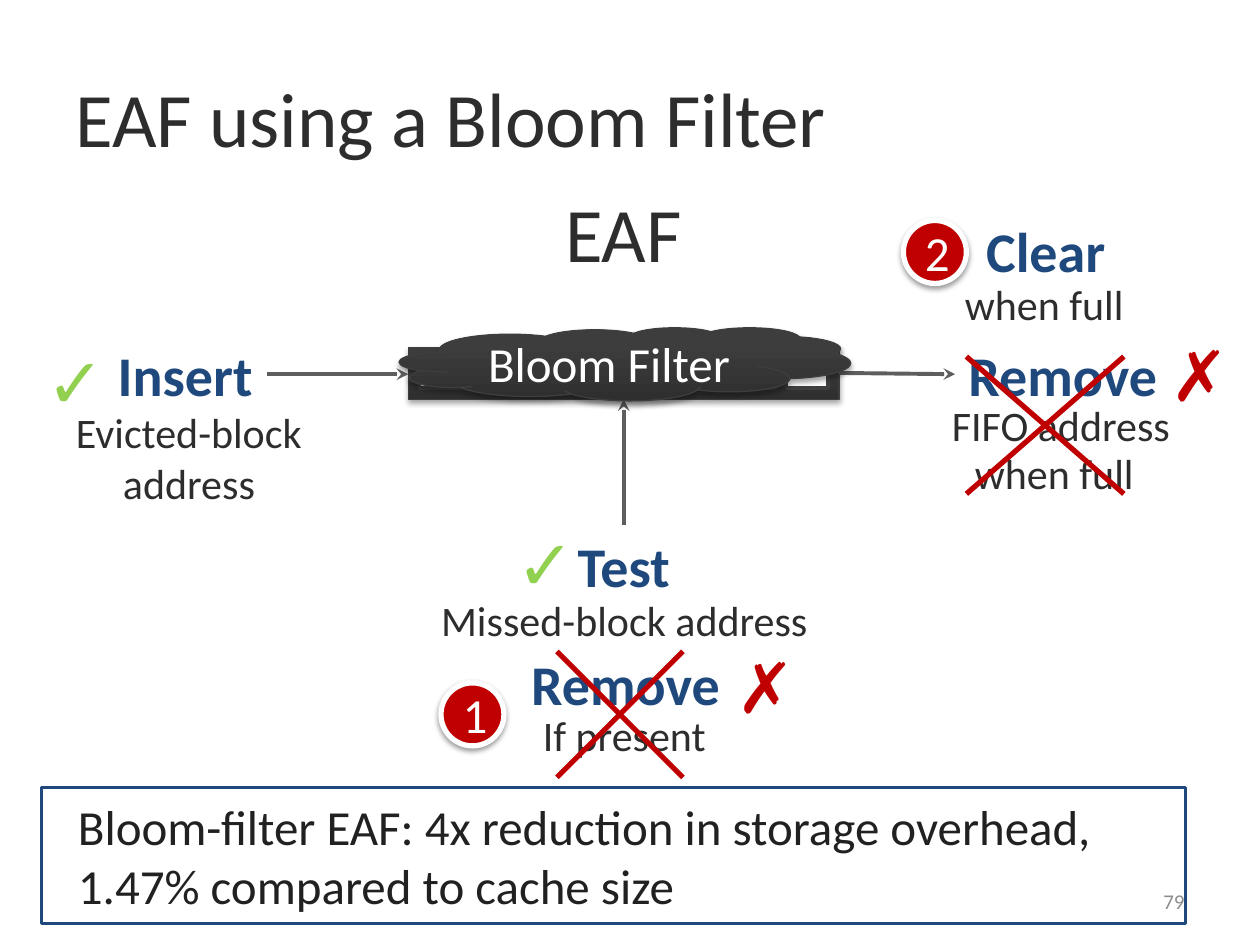
import pptx
import pptx.dml.color
import pptx.enum.shapes
import pptx.enum.text
import pptx.oxml
import pptx.oxml.ns
import pptx.util
from pptx.util import Inches

COLORS = {
    "text": "2D2D2D", "body": "212121", "heading": "1F497D", "white": "FFFFFF",
    "red": "C00000", "green": "92D050", "arrow": "5E5E5E", "number": "8C8C8C",
    "dark": "2F2F2F", "charcoal": "3D3D3D", "edge": "3E3E3E", "cell": "3F3F3F",
}
SHAPES = pptx.enum.shapes.MSO_SHAPE
ALIGN = pptx.enum.text.PP_ALIGN
ANCHOR = pptx.enum.text.MSO_ANCHOR


def rgb(name):
    return pptx.dml.color.RGBColor.from_string(COLORS[name])


def write(shape, text, size, color, bold=False, align=ALIGN.CENTER):
    paragraph = shape.text_frame.paragraphs[0]
    paragraph.alignment = align
    run = paragraph.add_run()
    run.text = text
    run.font.name = "Calibri"
    run.font.size = pptx.util.Pt(size)
    run.font.bold = bold
    run.font.color.rgb = rgb(color)
    return paragraph


def add_text(slide, box, text, size=24, color="text", bold=False,
             align=ALIGN.CENTER, wrap=True, anchor=ANCHOR.TOP, margin=0.05):
    shape = slide.shapes.add_textbox(*map(Inches, box))
    frame = shape.text_frame
    frame.word_wrap = wrap
    frame.vertical_anchor = anchor
    frame.margin_top = frame.margin_bottom = Inches(margin)
    write(shape, text, size, color, bold, align)


def add_heading(slide, box, text, margin=0.05):
    add_text(slide, box, text, 32, "heading", True, wrap=False, margin=margin)


def add_mark(slide, left, top, text, color):
    width = 0.64 if text == "✓" else 0.56
    add_text(slide, (left, top, width, 0.77), text, 40, color,
             align=ALIGN.LEFT, wrap=False)


def add_shape(slide, kind, box, fill, line, line_width):
    shape = slide.shapes.add_shape(kind, *map(Inches, box))
    shape.shadow.inherit = False
    shape.fill.solid()
    shape.fill.fore_color.rgb = rgb(fill)
    shape.line.color.rgb = rgb(line)
    shape.line.width = pptx.util.Pt(line_width)
    shape.text_frame.word_wrap = True
    shape.text_frame.vertical_anchor = ANCHOR.MIDDLE
    return shape


def add_shadow(shape, distance, opacity):
    effects = shape._element.spPr.find(pptx.oxml.ns.qn("a:effectLst"))
    effects.append(pptx.oxml.parse_xml(
        f'<a:outerShdw {pptx.oxml.ns.nsdecls("a")} blurRad="{pptx.util.Pt(3.1)}" '
        f'dist="{pptx.util.Pt(distance)}" dir="5400000" rotWithShape="0">'
        f'<a:srgbClr val="000000"><a:alpha val="{opacity * 1000}"/></a:srgbClr>'
        '</a:outerShdw>'))


def add_dark_shape(slide, kind, box):
    shape = add_shape(slide, kind, box, "dark", "edge", 0.75)
    shape.fill.gradient()
    shape.fill.gradient_angle = 90
    stops = shape.fill.gradient_stops
    for stop, color, position in zip(stops, ("dark", "charcoal"), (0, 0.8)):
        stop.color.rgb = rgb(color)
        stop.position = position
    add_shadow(shape, 1.8, 35)
    return shape


def add_badge(slide, left, top, text):
    badge = add_shape(slide, SHAPES.OVAL, (left, top, 0.5, 0.5), "red", "white", 3)
    add_shadow(badge, 1.6, 38)
    write(badge, text, 28, "white")


def add_line(slide, start, end, color, width, arrow=False):
    line = slide.shapes.add_connector(
        pptx.enum.shapes.MSO_CONNECTOR.STRAIGHT, *map(Inches, start + end))
    line.line.color.rgb = rgb(color)
    line.line.width = pptx.util.Pt(width)
    namespace = pptx.oxml.ns.nsdecls("a")
    if arrow:
        line.line._get_or_add_ln().append(
            pptx.oxml.parse_xml(f'<a:tailEnd {namespace} type="stealth"/>'))
    line._element.spPr.append(pptx.oxml.parse_xml(f"<a:effectLst {namespace}/>"))


def add_cross(slide, left, top, right, bottom):
    add_line(slide, (left, top), (right, bottom), "red", 3)
    add_line(slide, (right, top), (left, bottom), "red", 3)


def add_filter(slide):
    add_dark_shape(slide, SHAPES.RECTANGLE, (3.24, 2.76, 3.42, 0.41))
    for index in range(8):
        add_shape(slide, SHAPES.RECTANGLE,
                  (3.33 + index * 0.416, 2.82, 0.33, 0.26), "white", "cell", 2)
    add_line(slide, (2.12, 2.97), (3.24, 2.97), "arrow", 2.25, True)
    add_line(slide, (6.66, 2.96), (7.58, 2.97), "arrow", 2.25, True)
    add_line(slide, (4.95, 4.17), (4.95, 3.17), "arrow", 2.25, True)
    cloud = add_dark_shape(slide, SHAPES.CLOUD, (3.17, 2.6, 3.58, 0.58))
    write(cloud, "Bloom Filter", 28, "white")


def add_operations(slide):
    add_heading(slide, (0.83, 2.65, 1.28, 0.64), "Insert")
    add_text(slide, (0.5, 3.18, 2, 0.91), "Evicted-block address")
    add_heading(slide, (4.48, 4.17, 0.94, 0.64), "Test")
    add_text(slide, (3.08, 4.67, 3.75, 0.5), "Missed-block address")
    add_heading(slide, (4.11, 5.11, 1.71, 0.64), "Remove")
    add_text(slide, (4.08, 5.58, 1.75, 0.5), "If present")
    add_heading(slide, (7.58, 2.7, 1.71, 0.54), "Remove", margin=0)
    add_text(slide, (7.42, 3.17, 2, 0.4), "FIFO address ", margin=0)
    add_text(slide, (7.33, 3.5, 2, 0.5), " when full")
    add_heading(slide, (7.72, 1.67, 1.16, 0.64), "Clear")
    add_text(slide, (7.25, 2.16, 2, 0.5), " when full")


def add_verdicts(slide):
    add_cross(slide, 4.42, 5.17, 5.42, 6.17)
    add_cross(slide, 7.67, 2.83, 8.92, 3.92)
    add_mark(slide, 0.27, 2.64, "✓", "green")
    add_mark(slide, 4, 4.08, "✓", "green")
    add_mark(slide, 9.19, 2.58, "✗", "red")
    add_mark(slide, 5.75, 5.06, "✗", "red")
    add_badge(slide, 3.5, 5.42, "1")
    add_badge(slide, 7.17, 1.75, "2")


def add_summary(slide):
    box = add_shape(slide, SHAPES.RECTANGLE, (0.33, 6.25, 9.08, 1.08),
                    "white", "heading", 2)
    paragraph = write(
        box, "Bloom-filter EAF: 4x reduction in storage overhead, "
        "1.47% compared to cache size", 28, "body", align=ALIGN.LEFT)
    properties = paragraph._p.get_or_add_pPr()
    properties.set("marL", str(Inches(0.19)))
    properties.set("indent", "0")


def main():
    presentation = pptx.Presentation()
    presentation.slide_width = Inches(10)
    presentation.slide_height = Inches(7.5)
    slide = presentation.slides.add_slide(presentation.slide_layouts[6])
    add_text(slide, (0.5, 0.3, 9, 1.25), "EAF using a Bloom Filter", 44,
             align=ALIGN.LEFT, anchor=ANCHOR.MIDDLE)
    add_text(slide, (4.38, 1.42, 1.14, 0.84), "EAF", 44, wrap=False)
    add_filter(slide)
    add_operations(slide)
    add_verdicts(slide)
    add_summary(slide)
    add_text(slide, (7.17, 6.95, 2.33, 0.4), "79", 12, "number",
             align=ALIGN.RIGHT, anchor=ANCHOR.MIDDLE)
    presentation.save("out.pptx")


if __name__ == "__main__":
    main()
